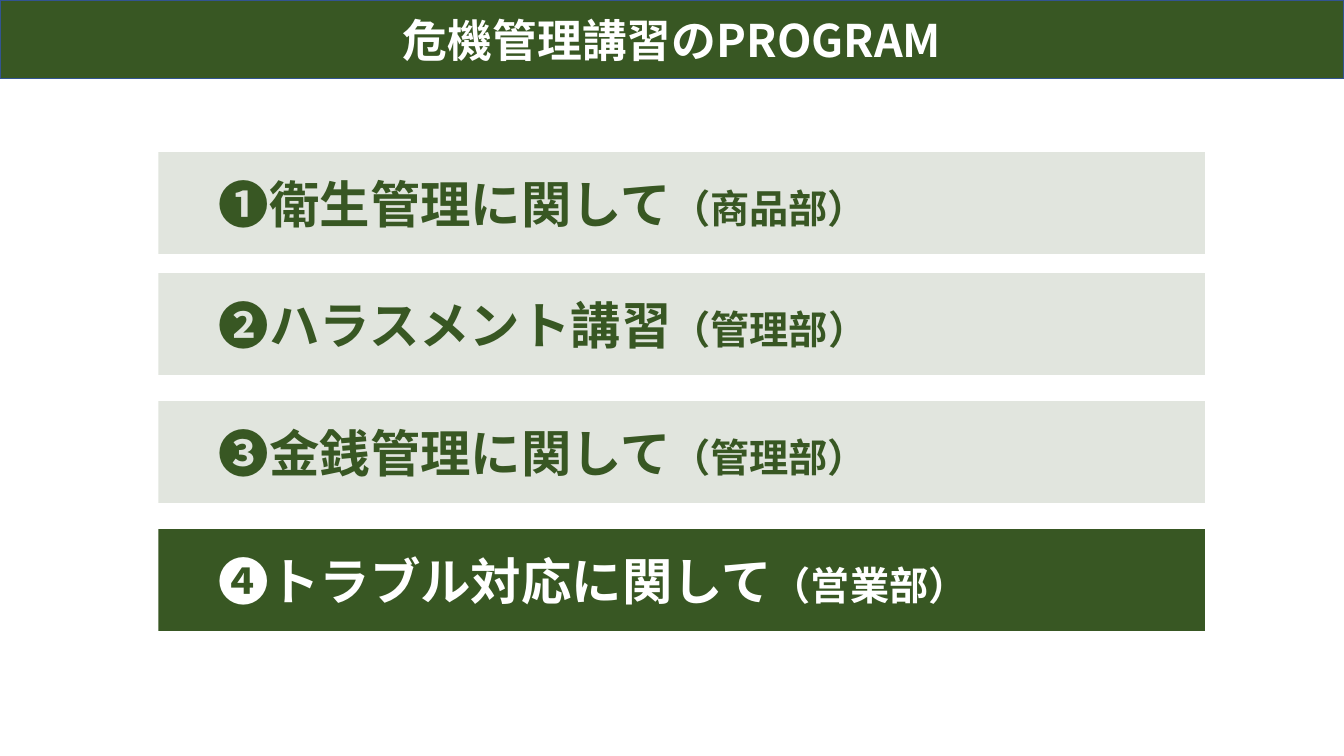
import pptx
import pptx.dml.color
import pptx.enum.shapes
import pptx.enum.text
import pptx.oxml.ns
import pptx.util
from lxml import etree

Inches = pptx.util.Inches
GREEN, WHITE, BORDER = "385723", "FFFFFF", "325491"
JAPANESE_FONT = "Noto Sans CJK JP"
PROGRAM = [
    (1.51, "❶衛生管理に関して", "（商品部）", False),
    (2.71, "❷ハラスメント講習", "（管理部）", False),
    (3.98, "❸金銭管理に関して", "（管理部）", False),
    (5.25, "❹トラブル対応に関して", "（営業部）", True),
]


def color(value):
    return pptx.dml.color.RGBColor.from_string(value)


class ProgramPage:
    """Holds the shared style and the slide, and draws its elements."""

    def __init__(self, deck):
        self.page = deck.slides.add_slide(deck.slide_layouts[5])

    def place(self, box, left, top, width, height):
        values = {"left": left, "top": top, "width": width, "height": height}
        for name, value in values.items():
            setattr(box, name, Inches(value))

    def paint(self, box, alpha=None):
        box.shadow.inherit = False
        box.fill.solid()
        box.fill.fore_color.rgb = color(GREEN)
        if alpha is not None:
            shade = next(box.element.spPr.iter(pptx.oxml.ns.qn("a:srgbClr")))
            etree.SubElement(shade, pptx.oxml.ns.qn("a:alpha"), val=str(alpha * 1000))

    def add_text(self, box, spans, font, ink, align, margin=0.1):
        frame = box.text_frame
        settings = {
            "word_wrap": True,
            "auto_size": pptx.enum.text.MSO_AUTO_SIZE.NONE,
            "vertical_anchor": pptx.enum.text.MSO_ANCHOR.MIDDLE,
            "margin_left": Inches(margin),
        }
        for name, value in settings.items():
            setattr(frame, name, value)
        para = frame.paragraphs[0]
        para.alignment = align
        for text, size in spans:
            span = para.add_run()
            span.text = text
            style = {"name": font, "size": pptx.util.Pt(size), "bold": True}
            for name, value in style.items():
                setattr(span.font, name, value)
            span.font.color.rgb = color(ink)
        for properties in box.element.iter(pptx.oxml.ns.qn("a:rPr")):
            etree.SubElement(properties, pptx.oxml.ns.qn("a:ea"), typeface=JAPANESE_FONT)

    def title(self, text):
        box = self.page.shapes.title
        self.place(box, 0, 0, 13.33, 0.78)
        self.paint(box)
        box.line.color.rgb = color(BORDER)
        box.line.width = pptx.util.Pt(1)
        self.add_text(box, [(text, 32)], JAPANESE_FONT, WHITE, pptx.enum.text.PP_ALIGN.CENTER)

    def bar(self, top, topic, department, active):
        kind = pptx.enum.shapes.MSO_SHAPE.RECTANGLE
        box = self.page.shapes.add_shape(kind, 0, 0, 0, 0)
        self.place(box, 1.57, top, 10.38, 1.01)
        self.paint(box, None if active else 15)
        box.line.fill.background()
        spans = [(topic, 36), (department, 28)]
        ink = WHITE if active else GREEN
        self.add_text(box, spans, "Arial", ink, pptx.enum.text.PP_ALIGN.LEFT, 0.6)


def main():
    deck = pptx.Presentation()
    deck.slide_width, deck.slide_height = Inches(13.33), Inches(7.5)
    page = ProgramPage(deck)
    page.title("危機管理講習のPROGRAM")
    for entry in PROGRAM:
        page.bar(*entry)
    deck.save("out.pptx")


if __name__ == "__main__":
    main()
